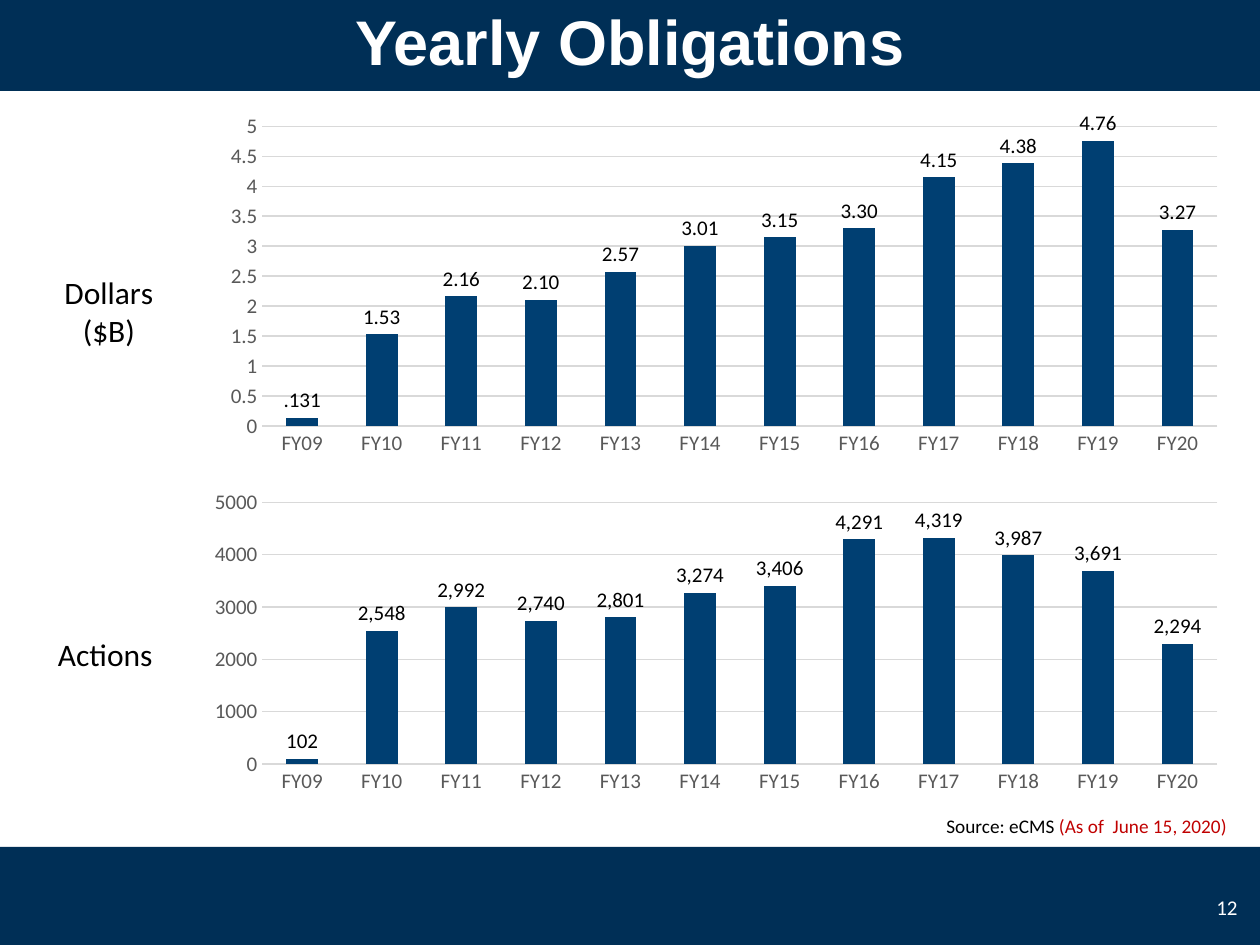
from lxml import etree
from pptx import Presentation
from pptx.chart.data import CategoryChartData
from pptx.dml.color import RGBColor
from pptx.enum.chart import XL_CHART_TYPE, XL_LABEL_POSITION, XL_TICK_MARK
from pptx.enum.shapes import MSO_SHAPE
from pptx.enum.text import MSO_ANCHOR, PP_ALIGN
from pptx.oxml.ns import qn
from pptx.util import Emu, Pt

COLUMN = XL_CHART_TYPE.COLUMN_CLUSTERED
OUTSIDE_END = XL_LABEL_POSITION.OUTSIDE_END
NO_TICK = XL_TICK_MARK.NONE
RECT = MSO_SHAPE.RECTANGLE
TOP, MIDDLE = MSO_ANCHOR.TOP, MSO_ANCHOR.MIDDLE
LEFT, CENTER, RIGHT = PP_ALIGN.LEFT, PP_ALIGN.CENTER, PP_ALIGN.RIGHT

NAVY = RGBColor(0x00, 0x2F, 0x56)
BLUE = RGBColor(0x00, 0x3F, 0x72)
GRID = RGBColor(0xD9, 0xD9, 0xD9)
GRAY = RGBColor(0x59, 0x59, 0x59)
RED = RGBColor(0xC0, 0x00, 0x00)
BLACK = RGBColor(0, 0, 0)
WHITE = RGBColor(0xFF, 0xFF, 0xFF)

WIDTH, HEIGHT = 1260, 945
YEARS = [f"FY{year:02}" for year in range(9, 21)]
DOLLARS = [0.131, 1.53, 2.16, 2.10, 2.57, 3.01, 3.15, 3.30, 4.15, 4.38, 4.76, 3.27]
ACTIONS = [102, 2548, 2992, 2740, 2801, 3274, 3406, 4291, 4319, 3987, 3691, 2294]


def px(n):
    return Emu(round(n * 914400 / 126))


def set_font(font, size, color, name="Calibri", bold=False):
    font.size, font.name, font.bold = Pt(size), name, bold
    font.color.rgb = color


def set_layout(parent, index, **values):
    """Place a chart part by fractions of the chart area."""
    for old in parent.findall(qn("c:layout")):
        parent.remove(old)
    layout = etree.Element(qn("c:layout"))
    manual = etree.SubElement(layout, qn("c:manualLayout"))
    for tag, value in values.items():
        etree.SubElement(manual, qn(f"c:{tag}")).set("val", str(value))
    parent.insert(index, layout)


class Deck:
    def __init__(self, prs):
        self.s = prs.slides.add_slide(prs.slide_layouts[5])

    def bar(self, x, y, w, h):
        sp = self.s.shapes.add_shape(RECT, px(x), px(y), px(w), px(h))
        sp.shadow.inherit = False
        sp.fill.solid()
        sp.fill.fore_color.rgb = NAVY
        sp.line.fill.background()

    def title(self, text, x, y, w, h):
        sp = self.s.shapes.title
        sp.left, sp.top, sp.width, sp.height = px(x), px(y), px(w), px(h)
        sp._element.getparent().append(sp._element)  # in front of the bars
        tf = sp.text_frame
        tf.text = text
        tf.vertical_anchor = MIDDLE
        p = tf.paragraphs[0]
        p.alignment = CENTER
        set_font(p.font, 36, WHITE, "Arial", True)

    def text(self, runs, x, y, w, h, size, align=LEFT, anchor=TOP):
        tf = self.s.shapes.add_textbox(px(x), px(y), px(w), px(h)).text_frame
        tf.word_wrap = True
        tf.vertical_anchor = anchor
        p = tf.paragraphs[0]
        p.alignment = align
        p.font.size, p.font.name = Pt(size), "Calibri"
        for text, color in runs:
            r = p.add_run()
            r.text = text
            r.font.color.rgb = color

    def chart(self, title, title_x, values, top, step, label_format, x, y, w, h):
        data = CategoryChartData()
        data.categories = YEARS
        data.add_series("Series 1", values)
        chart = self.s.shapes.add_chart(COLUMN, px(x), px(y), px(w), px(h), data).chart
        set_font(chart.font, 10, BLACK)
        chart.has_legend = False

        # Title to the left of the plot
        tf = chart.chart_title.text_frame
        tf.text = title
        for p in tf.paragraphs:
            p.alignment = CENTER
            set_font(p.font, 18, BLACK)
        chart.chart_title.include_in_layout = False
        set_layout(chart.chart_title._element, 1,
                   xMode="edge", yMode="edge", x=title_x, y=0.43)
        set_layout(chart._chartSpace.chart.plotArea, 0, layoutTarget="inner",
                   xMode="edge", yMode="edge", x=0.195, y=0.033, w=0.805, h=0.836)

        # Axes
        for axis in (chart.category_axis, chart.value_axis):
            axis.major_tick_mark = axis.minor_tick_mark = NO_TICK
            set_font(axis.tick_labels.font, 12, GRAY)
        value_axis = chart.value_axis
        value_axis.minimum_scale, value_axis.maximum_scale = 0, top
        value_axis.major_unit = step
        value_axis.format.line.fill.background()
        for line in (chart.category_axis.format.line,
                     value_axis.major_gridlines.format.line):
            line.color.rgb = GRID
            line.width = Pt(0.75)

        # Columns and their labels
        plot = chart.plots[0]
        plot.gap_width, plot.overlap = 150, 5
        plot.vary_by_categories = False
        fill = plot.series[0].format.fill
        fill.solid()
        fill.fore_color.rgb = BLUE
        labels = plot.series[0].data_labels
        labels.show_value = True
        labels.position = OUTSIDE_END
        labels.number_format = label_format
        labels.number_format_is_linked = False
        set_font(labels.font, 12, BLACK)


def main():
    prs = Presentation()
    prs.slide_width, prs.slide_height = px(WIDTH), px(HEIGHT)
    deck = Deck(prs)

    # Header and footer bands
    for y in (847, -10):
        deck.bar(0, y, WIDTH, 101)
    deck.title("Yearly Obligations", 0, -10, WIDTH, 101)

    # Charts
    deck.chart("Dollars\n($B)", 0.025, DOLLARS, 5, 0.5, "[<1].000;0.00",
               31, 111, 1187, 362)
    deck.chart("Actions", 0.018, ACTIONS, 5000, 1000, "#,##0",
               31, 490, 1187, 315)

    # Source and page number
    deck.text([("Source: eCMS ", BLACK), ("(As of  June 15, 2020)", RED)],
              934, 808, 330, 37, 11)
    deck.text([("12", WHITE)], 1197, 882, 53, 50, 12, RIGHT, MIDDLE)

    prs.save("out.pptx")


if __name__ == "__main__":
    main()
